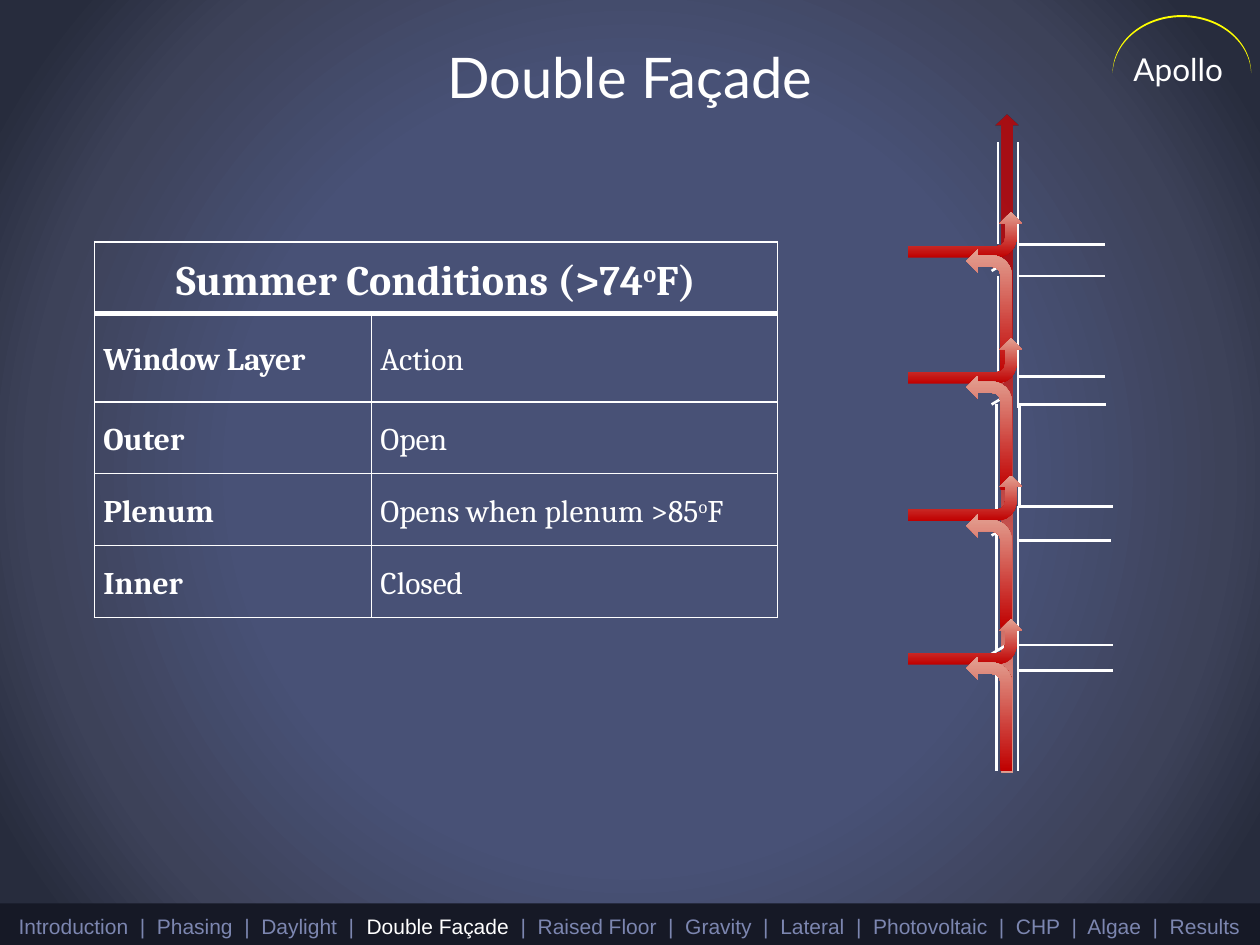
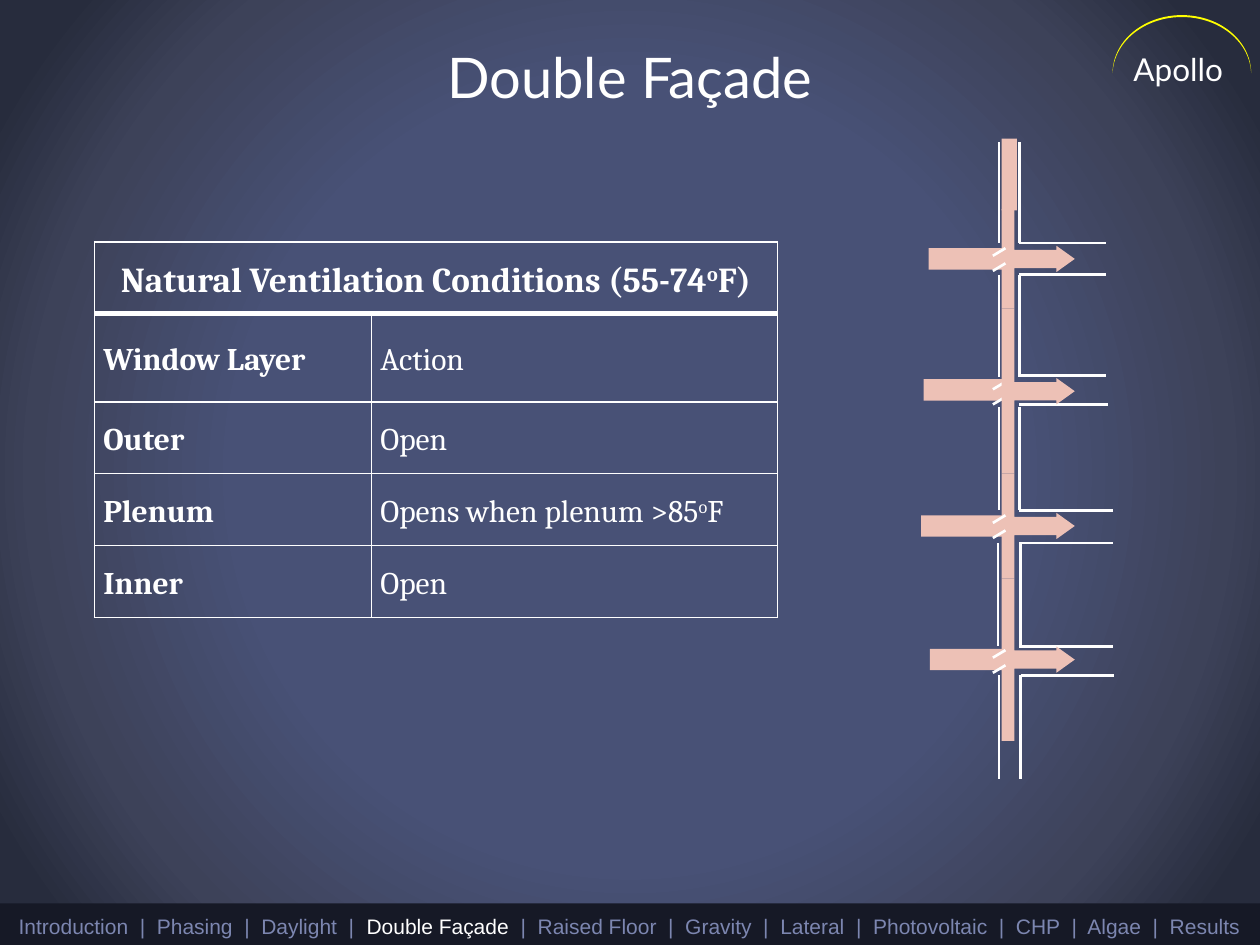
from dataclasses import dataclass

from lxml.etree import SubElement
from pptx import Presentation
from pptx.dml.color import RGBColor
from pptx.enum.shapes import MSO_CONNECTOR, MSO_SHAPE
from pptx.enum.text import MSO_ANCHOR, PP_ALIGN
from pptx.oxml.ns import qn
from pptx.util import Inches, Pt

COLORS = {
    "white": "FFFFFF",
    "page_center": "485176",
    "page_middle": "3D4259",
    "page_edge": "272C3D",
    "band": "161926",
    "muted": "7C86B0",
    "sun": "FFFF00",
    "hot": "C00000",
    "warm": "E3A192",
    "air": "EDC1B6",
}
SECTIONS = ["Introduction", "Phasing", "Daylight", "Double Façade", "Raised Floor",
            "Gravity", "Lateral", "Photovoltaic", "CHP", "Algae", "Results"]
SEPARATOR = "  |  "
CURRENT = "Double Façade"
BENT_ARROW = (0.25, 0.257, 0.25, 0.438)
CALLOUT = (0.25, 0.179, 0.25, 0.172)


@dataclass
class Span:
    text: str
    size: float
    font: str
    color: str = "white"
    bold: bool = False
    raised: bool = False


@dataclass
class Piece:
    """A preset shape with a plain fill, or a vertical gradient if stops are given."""
    kind: MSO_SHAPE
    left: float
    top: float
    width: float
    height: float
    color: str = "air"
    stops: tuple = ()
    adjust: tuple = ()
    turn: float = 0
    flipped: bool = False


@dataclass
class Section:
    """White lines of the wall section; louvers are given by their middle heights."""
    floors: list   # y, left, right
    walls: list    # x, top, bottom
    louvers: list  # y
    louver_x: float


def rgb(name: str) -> RGBColor:
    return RGBColor.from_string(COLORS[name])


# Fills and text

def set_gradient(owner, fill, stops: tuple, radial: bool = False) -> None:
    """Stops are (position %, colour name, opacity %)."""
    fill.gradient()
    grad = owner.element.find(".//" + qn("a:gradFill"))
    for child in list(grad):
        grad.remove(child)
    grad.set("rotWithShape", "0")
    stop_list = SubElement(grad, qn("a:gsLst"))
    for position, name, opacity in stops:
        stop = SubElement(stop_list, qn("a:gs"), pos=str(position * 1000))
        color = SubElement(stop, qn("a:srgbClr"), val=COLORS[name])
        if opacity < 100:
            SubElement(color, qn("a:alpha"), val=str(opacity * 1000))
    if radial:
        route = SubElement(grad, qn("a:path"), {"path": "circle"})
        SubElement(route, qn("a:fillToRect"), {side: "50000" for side in "ltrb"})
    else:
        SubElement(grad, qn("a:lin"), ang="5400000", scaled="0")


def add_spans(para, spans: list[Span]) -> None:
    for item in spans:
        span = para.add_run()
        span.text = item.text
        span.font.size = Pt(item.size)
        span.font.name = item.font
        span.font.bold = item.bold
        span.font.color.rgb = rgb(item.color)
        if item.raised:
            span._r.get_or_add_rPr().set("baseline", "30000")


def add_text(page, left: float, top: float, width: float, height: float,
             spans: list[Span], anchor=MSO_ANCHOR.TOP, line_height=None):
    box = page.shapes.add_textbox(Inches(left), Inches(top), Inches(width), Inches(height))
    frame = box.text_frame
    frame.word_wrap = True
    frame.vertical_anchor = anchor
    para = frame.paragraphs[0]
    para.alignment = PP_ALIGN.CENTER
    if line_height:
        para.line_spacing = Pt(line_height)
    add_spans(para, spans)
    return box


# Shapes and lines

def add_piece(page, piece: Piece) -> None:
    box = page.shapes.add_shape(piece.kind, Inches(piece.left), Inches(piece.top),
                                Inches(piece.width), Inches(piece.height))
    box.shadow.inherit = False
    box.line.fill.background()
    if piece.stops:
        set_gradient(box, box.fill, piece.stops)
    else:
        box.fill.solid()
        box.fill.fore_color.rgb = rgb(piece.color)
    for index, value in enumerate(piece.adjust):
        box.adjustments[index] = value
    box.rotation = piece.turn
    if piece.flipped:
        box.element.spPr.find(qn("a:xfrm")).set("flipV", "1")


def add_line(page, x1: float, y1: float, x2: float, y2: float) -> None:
    line = page.shapes.add_connector(MSO_CONNECTOR.STRAIGHT, Inches(x1), Inches(y1),
                                     Inches(x2), Inches(y2))
    line.line.color.rgb = rgb("white")
    line.line.width = Pt(1.5)
    SubElement(line.element.spPr, qn("a:effectLst"))


def add_section(page, section: Section) -> None:
    for y, left, right in section.floors:
        add_line(page, left, y, right, y)
    for x, top, bottom in section.walls:
        add_line(page, x, top, x, bottom)


def add_louvers(page, section: Section) -> None:
    x = section.louver_x
    for y in section.louvers:
        add_line(page, x - 0.05, y + 0.03, x + 0.05, y - 0.03)


# Conditions table

def set_border(cell, widths: dict[str, float]) -> None:
    props = cell._tc.get_or_add_tcPr()
    for index, (side, width) in enumerate(widths.items()):
        edge = SubElement(props, qn(f"a:ln{side}"), w=str(Pt(width)))
        SubElement(SubElement(edge, qn("a:solidFill")), qn("a:srgbClr"), val=COLORS["white"])
        props.insert(index, edge)


def degree_spans(text: str, size: float, bold: bool) -> list[Span]:
    """Raise the degree letter of a text such as 85oF."""
    before, mark, after = text.partition("oF")
    spans = [Span(before, size, "Cambria", bold=bold)]
    if mark:
        spans += [Span("o", size, "Cambria", bold=bold, raised=True),
                  Span("F" + after, size, "Cambria", bold=bold)]
    return spans


def add_conditions(page, heading: str, heading_size: float, inner: str) -> None:
    rows = [(heading, ""), ("Window Layer", "Action"), ("Outer", "Open"),
            ("Plenum", "Opens when plenum >85oF"), ("Inner", inner)]
    table = page.shapes.add_table(len(rows), 2, Inches(0.75), Inches(1.92),
                                  Inches(5.42), Inches(3)).table
    table.first_row = table.horz_banding = False
    for column, width in zip(table.columns, (2.2, 3.22)):
        column.width = Inches(width)
    for row, height in zip(table.rows, (0.57, 0.7, 0.57, 0.57, 0.57)):
        row.height = Inches(height)
    table.cell(0, 0).merge(table.cell(0, 1))
    for r, texts in enumerate(rows):
        for c, text in enumerate(texts):
            cell = table.cell(r, c)
            cell.fill.background()
            set_border(cell, {"L": 1, "R": 1, "T": 3 if r == 1 else 1, "B": 3 if r == 0 else 1})
            cell.vertical_anchor = MSO_ANCHOR.MIDDLE
            cell.margin_left = cell.margin_right = Inches(0.07)
            cell.margin_top = cell.margin_bottom = 0
            if text:
                para = cell.text_frame.paragraphs[0]
                para.line_spacing = 1.15
                para.alignment = PP_ALIGN.CENTER if r == 0 else PP_ALIGN.LEFT
                add_spans(para, degree_spans(text, heading_size if r == 0 else 18, c == 0))


# Parts shared by both pages

def add_page(deck):
    page = deck.slides.add_slide(deck.slide_layouts[6])
    add_text(page, 0.5, 0.23, 9, 0.69, [Span(CURRENT, 32, "Lato")], MSO_ANCHOR.BOTTOM, 58)
    # Navigation band
    add_piece(page, Piece(MSO_SHAPE.RECTANGLE, 0, 7.17, 10, 0.33, "band"))
    here = SECTIONS.index(CURRENT)
    add_text(page, 0, 7.2, 10, 0.3, [
        Span(SEPARATOR.join(SECTIONS[:here]) + SEPARATOR, 12, "Arial", "muted"),
        Span(CURRENT, 12, "Arial"),
        Span(SEPARATOR + SEPARATOR.join(SECTIONS[here + 1:]), 12, "Arial", "muted"),
    ])
    # Project name under an arc
    name = add_text(page, 8.33, -0.12, 1.92, 0.69, [Span("Apollo", 18, "Lato")], line_height=58)
    name.text_frame.margin_left = Inches(0.22)
    name.text_frame.margin_top = Inches(0.01)
    add_piece(page, Piece(MSO_SHAPE.MOON, 9.15, -0.2, 0.46, 1.1, "sun",
                          adjust=(0.033,), turn=90))
    return page


def add_summer(deck) -> None:
    page = add_page(deck)
    add_conditions(page, "Summer Conditions (>74oF)", 24, "Closed")
    # Air rising through the plenum
    add_piece(page, Piece(MSO_SHAPE.UP_ARROW, 7.9, 0.91, 0.18, 5.22,
                          stops=((24, "hot", 80), (100, "warm", 100))))
    section = Section(
        floors=[(1.94, 8.08, 8.77), (2.19, 8.08, 8.77), (2.99, 8.08, 8.77), (3.21, 8.09, 8.78),
                (4.02, 8.09, 8.83), (4.29, 8.08, 8.82), (5.12, 8.09, 8.83), (5.32, 8.09, 8.83)],
        walls=[(7.92, 1.13, 1.94), (7.92, 2.19, 3), (7.91, 3.21, 4.09), (7.91, 4.21, 5.16),
               (7.91, 5.28, 6.12), (8.08, 1.13, 1.94), (8.08, 1.94, 2.19), (8.08, 2.19, 3),
               (8.08, 2.99, 3.24), (8.09, 3.21, 4.02), (8.08, 4.02, 4.29), (8.08, 4.29, 6.12)],
        louvers=[2, 2.12, 3.05, 3.18, 4.09, 4.22, 5.16, 5.28],
        louver_x=7.92)
    add_section(page, section)
    add_louvers(page, section)
    # At each floor, one arrow enters and one leaves
    stops = ((0, "hot", 100), (100, "warm", 100))
    for enter, leave, height in [(1.41, 1.98, 1), (2.41, 2.98, 0.91),
                                 (3.5, 4.08, 0.91), (4.64, 5.21, 0.91)]:
        for left, top, length, turn in [(7.48, enter, 0.91, 270), (7.67, leave, height, 180)]:
            add_piece(page, Piece(MSO_SHAPE.BENT_ARROW, left, top, 0.36, length, stops=stops,
                                  adjust=BENT_ARROW, turn=turn, flipped=True))


def add_natural(deck) -> None:
    page = add_page(deck)
    add_conditions(page, "Natural Ventilation Conditions (55-74oF)", 20, "Open")
    section = Section(
        floors=[(1.93, 8.09, 8.78), (2.18, 8.09, 8.78), (2.98, 8.09, 8.78), (3.21, 8.09, 8.79),
                (4.05, 8.09, 8.83), (4.31, 8.09, 8.83), (5.13, 8.09, 8.83), (5.36, 8.1, 8.84)],
        walls=[(x, top, bottom)
               for top, bottom, outer, inner in [
                   (1.13, 1.93, 7.93, 8.09), (2.18, 2.99, 7.93, 8.09), (3.23, 4.05, 7.93, 8.09),
                   (4.31, 5.13, 7.92, 8.1), (5.36, 6.18, 7.93, 8.1)]
               for x in (outer, inner)],
        louvers=[2, 2.12, 3.06, 3.18, 4.12, 4.24, 5.19, 5.31],
        louver_x=7.93)
    add_section(page, section)
    # Air crossing the plenum at each floor
    callouts = [Piece(MSO_SHAPE.RIGHT_ARROW_CALLOUT, 7.95, top, 0.58, height, adjust=CALLOUT)
                for top, height in [(3.76, 0.83), (1.66, 0.79), (4.59, 1.29), (2.45, 1.31)]]
    inlets = [Piece(MSO_SHAPE.RECTANGLE, left, top, 0.65, 0.17)
              for left, top in [(7.37, 1.97), (7.33, 3.01), (7.31, 4.09), (7.38, 5.15)]]
    chimney = Piece(MSO_SHAPE.RECTANGLE, 7.95, 1.1, 0.12, 0.57)
    for piece in [*callouts[:3], chimney, *inlets]:
        add_piece(page, piece)
    add_louvers(page, section)
    add_piece(page, callouts[3])


def main() -> None:
    deck = Presentation()
    deck.slide_width, deck.slide_height = Inches(10), Inches(7.5)
    master = deck.slide_master
    set_gradient(master, master.background.fill,
                 ((50, "page_center", 100), (76, "page_middle", 100), (92, "page_edge", 100)),
                 radial=True)
    add_summer(deck)
    add_natural(deck)
    deck.save("out.pptx")


if __name__ == "__main__":
    main()
